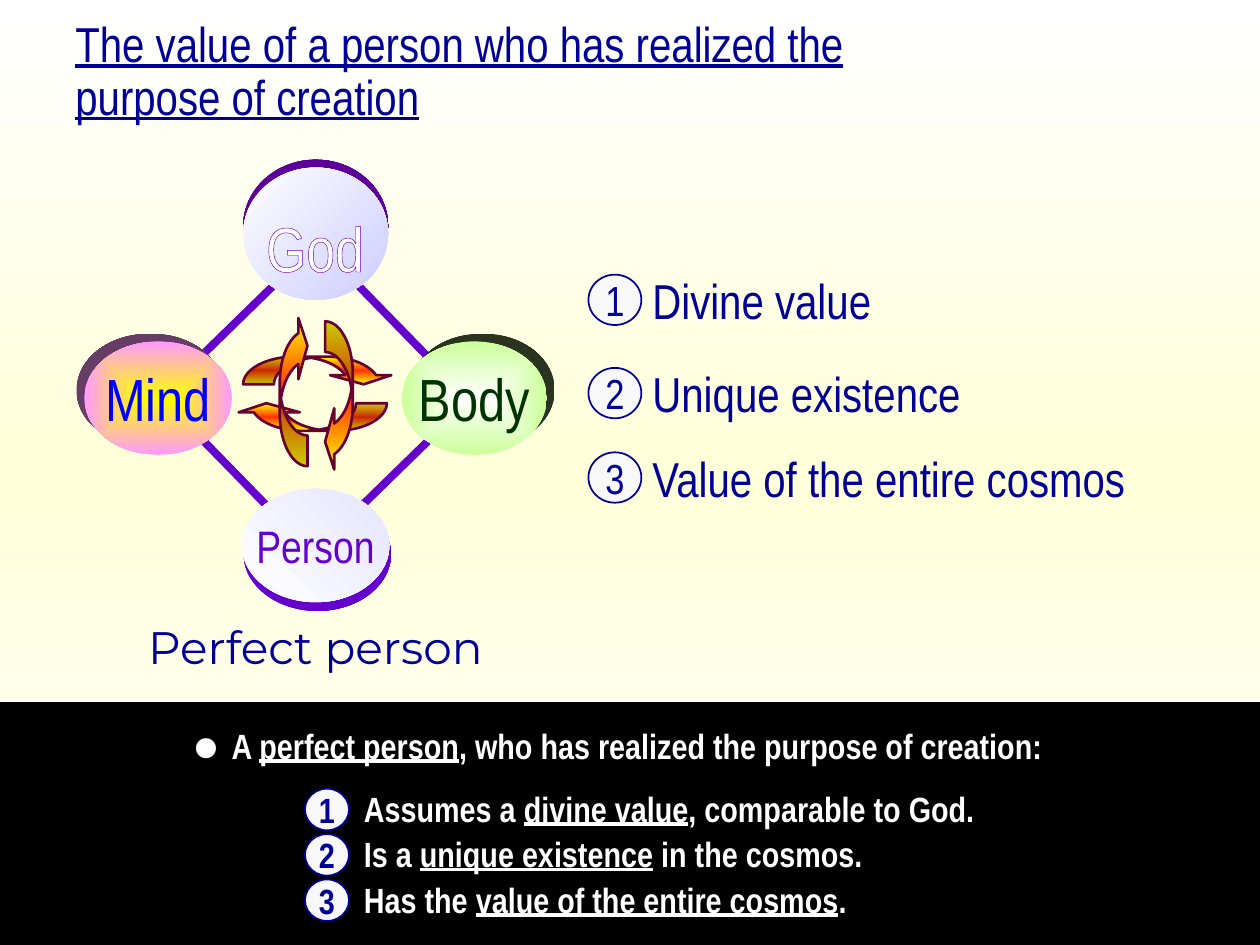
from dataclasses import dataclass
from typing import Optional

from lxml import etree
from pptx import Presentation
from pptx import util as u
from pptx.dml.color import RGBColor
from pptx.enum import shapes, text
from pptx.oxml import ns

PX = 9144
NARROW = "Arial Narrow"
COLORS = {
    "white": "FFFFFF", "cream": "FFFFD9", "black": "000000", "navy": "000099",
    "badge": "F8F8F8", "violet": "6600CC", "lavender": "CCCCFF", "mist": "E5E5FF",
    "yellow": "FFFF00", "pink": "FF99FF", "blue": "0000FF", "lime": "CCFF99",
    "forest": "003300", "fire": "FF3300", "maroon": "660033",
    "god_shade": "5C0099", "mind_shade": "663D66", "body_shade": "29331F",
}


@dataclass
class Gradient:
    colors: tuple[str, ...]
    angle: Optional[int] = None


@dataclass
class Style:
    size: int
    color: str
    font: str = NARROW
    bold: bool = False
    centered: bool = False
    wrap: bool = False
    spacing: object = None
    middle: bool = True


@dataclass
class Node:
    name: str
    box: tuple[int, int, int, int]
    gradient: Gradient
    shade: str
    shade_pt: float
    shade_angle: int
    style: Optional[Style] = None


@dataclass
class Arrow:
    left: int
    top: int
    rotation: int


@dataclass
class Point:
    top: int
    width: int
    pieces: tuple[str, ...]


def px(*lengths: int) -> list[int]:
    return [length * PX for length in lengths]


def rgb(name: str) -> RGBColor:
    return RGBColor.from_string(COLORS[name])


def add_color(parent, name: str) -> None:
    etree.SubElement(parent, ns.qn("a:srgbClr"), val=COLORS[name])


def set_gradient(fill, owner, gradient: Gradient) -> None:
    fill.gradient()
    grad = owner.find(".//" + ns.qn("a:gradFill"))
    for child in list(grad):
        grad.remove(child)
    grad.set("rotWithShape", "0")
    stops = etree.SubElement(grad, ns.qn("a:gsLst"))
    last = len(gradient.colors) - 1
    for i, name in enumerate(gradient.colors):
        add_color(etree.SubElement(stops, ns.qn("a:gs"), pos=str(100000 * i // last)), name)
    if gradient.angle is None:
        center = etree.SubElement(grad, ns.qn("a:path"), path="shape")
        etree.SubElement(center, ns.qn("a:fillToRect"),
                         **{side: "50000" for side in "ltrb"})
    else:
        etree.SubElement(grad, ns.qn("a:lin"), ang=str(gradient.angle * 60000), scaled="0")


def write(frame, pieces: tuple[str, ...], style: Style) -> None:
    frame.word_wrap = style.wrap
    frame.vertical_anchor = text.MSO_ANCHOR.MIDDLE if style.middle else text.MSO_ANCHOR.TOP
    if style.wrap:
        frame.auto_size = text.MSO_AUTO_SIZE.SHAPE_TO_FIT_TEXT
    line = frame.paragraphs[0]
    line.alignment = text.PP_ALIGN.CENTER if style.centered else text.PP_ALIGN.LEFT
    if style.spacing:
        line.line_spacing = style.spacing
    for i, piece in enumerate(pieces):
        if not piece:
            continue
        run = line.add_run()
        run.text = piece
        run.font.size = u.Pt(style.size)
        run.font.name = style.font
        run.font.bold = style.bold
        run.font.underline = i % 2 == 1
        run.font.color.rgb = rgb(style.color)


def add_label(parent, box: tuple[int, int, int, int], pieces: tuple[str, ...], style: Style):
    label = parent.add_textbox(*px(*box))
    write(label.text_frame, pieces, style)
    return label


def add_form(parent, preset, box: tuple[int, int, int, int], fill=None,
             line: Optional[str] = None, weight: float = 1):
    form = parent.add_shape(preset, *px(*box))
    form.shadow.inherit = False
    if isinstance(fill, Gradient):
        set_gradient(form.fill, form._element.spPr, fill)
    elif fill:
        form.fill.solid()
        form.fill.fore_color.rgb = rgb(fill)
    else:
        form.fill.background()
    if line:
        form.line.color.rgb = rgb(line)
        form.line.width = u.Pt(weight)
    else:
        form.line.fill.background()
    return form


def add_badge(parent, box: tuple[int, int, int, int], number: int, style: Style) -> None:
    badge = add_form(parent, shapes.MSO_SHAPE.OVAL, box, "badge", "navy")
    write(badge.text_frame, (str(number),), style)


def add_node(parent, node: Node) -> None:
    oval = add_form(parent, shapes.MSO_SHAPE.OVAL, node.box, node.gradient)
    effects = oval._element.spPr.find(ns.qn("a:effectLst"))
    shade = etree.SubElement(effects, ns.qn("a:outerShdw"), blurRad="0",
                             dist=str(u.Pt(node.shade_pt)),
                             dir=str(node.shade_angle * 60000),
                             algn="ctr", rotWithShape="0")
    add_color(shade, node.shade)
    if node.style:
        write(oval.text_frame, (node.name,), node.style)
        return
    label = add_label(parent, (206, 161, 88, 50), (node.name,),
                      Style(36, "white", centered=True, middle=False))
    label.text_frame.margin_left = label.text_frame.margin_right = 0
    props = label.text_frame.paragraphs[0].runs[0].font._element
    outline = etree.Element(ns.qn("a:ln"), w=str(u.Pt(1.5)))
    add_color(etree.SubElement(outline, ns.qn("a:solidFill")), "violet")
    props.insert(0, outline)


def add_arrow(parent, arrow: Arrow) -> None:
    form = add_form(parent, shapes.MSO_SHAPE.CURVED_LEFT_ARROW,
                    (arrow.left, arrow.top, 22, 120),
                    Gradient(("yellow", "fire", "yellow"), 90), "maroon", 1.5)
    for i, value in enumerate((1.11, 2.21, 0.33)):
        form.adjustments[i] = value
    form.rotation = arrow.rotation


NODES = [
    Node("God", (193, 133, 115, 105), Gradient(("white", "lavender"), 45),
         "god_shade", 4.5, 270),
    Node("Mind", (67, 271, 117, 90), Gradient(("yellow", "pink")),
         "mind_shade", 6.4, 225, Style(34, "blue", centered=True)),
    Node("Body", (319, 271, 115, 90), Gradient(("white", "lime")),
         "body_shade", 6.4, 315, Style(34, "forest", centered=True)),
    Node("Person", (192, 388, 117, 90), Gradient(("white", "mist"), 315),
         "violet", 5.1, 79, Style(26, "violet", centered=True)),
]
ARROWS = [Arrow(242, 234, 270), Arrow(236, 271, 90), Arrow(222, 250, 180), Arrow(258, 255, 0)]
VALUES = [
    Point(217, 217, ("Divine value",)),
    Point(291, 292, ("Unique existence",)),
    Point(358, 442, ("Value of the entire cosmos",)),
]
CLAIMS = [
    Point(625, 508, ("Assumes a ", "divine value", ", comparable to God.")),
    Point(661, 417, ("Is a ", "unique existence", " in the cosmos.")),
    Point(697, 408, ("Has the ", "value of the entire cosmos", ".")),
]


def main() -> None:
    deck = Presentation()
    deck.slide_width, deck.slide_height = px(1000, 750)
    slide = deck.slides.add_slide(deck.slide_layouts[6])
    set_gradient(slide.background.fill, slide._element,
                 Gradient(("white", "cream", "white"), 270))
    canvas = slide.shapes

    add_label(canvas, (50, 11, 733, 94),
              ("", "The value of a person who has realized the purpose of creation"),
              Style(28, "navy", wrap=True, spacing=u.Pt(30), middle=False))
    add_label(canvas, (92, 492, 317, 42), ("Perfect person",),
              Style(26, "navy", "Montserrat", centered=True))

    diagram = canvas.add_group_shape().shapes
    diamond = add_form(diagram, shapes.MSO_SHAPE.RECTANGLE, (163, 229, 174, 174),
                       None, "violet", 4.5)
    diamond.rotation = 225.7
    diamond._element.spPr.xfrm.set("flipH", "1")
    for node in NODES:
        add_node(diagram, node)
    for arrow in ARROWS:
        add_arrow(diagram, arrow)

    for number, value in enumerate(VALUES, 1):
        add_badge(canvas, (467, value.top + 1, 42, 40), number, Style(24, "navy", centered=True))
        add_label(canvas, (508, value.top, value.width, 42), value.pieces, Style(28, "navy"))

    add_form(canvas, shapes.MSO_SHAPE.RECTANGLE, (0, 558, 1000, 192), "black", "black", 0.75)
    summary = canvas.add_group_shape().shapes
    claim_style = Style(20, "white", bold=True, wrap=True, spacing=0.85, middle=False)
    add_label(summary, (174, 575, 667, 39),
              ("A ", "perfect person", ", who has realized the purpose of creation:"), claim_style)
    add_label(summary, (142, 567, 42, 68), ("•",),
              Style(48, "white", "Times New Roman", wrap=True, spacing=0.69, middle=False))
    for number, claim in enumerate(CLAIMS, 1):
        add_badge(summary, (242, claim.top + 1, 35, 33), number,
                  Style(20, "navy", bold=True, centered=True))
        add_label(summary, (279, claim.top, claim.width, 39), claim.pieces, claim_style)

    deck.save("out.pptx")


if __name__ == "__main__":
    main()
